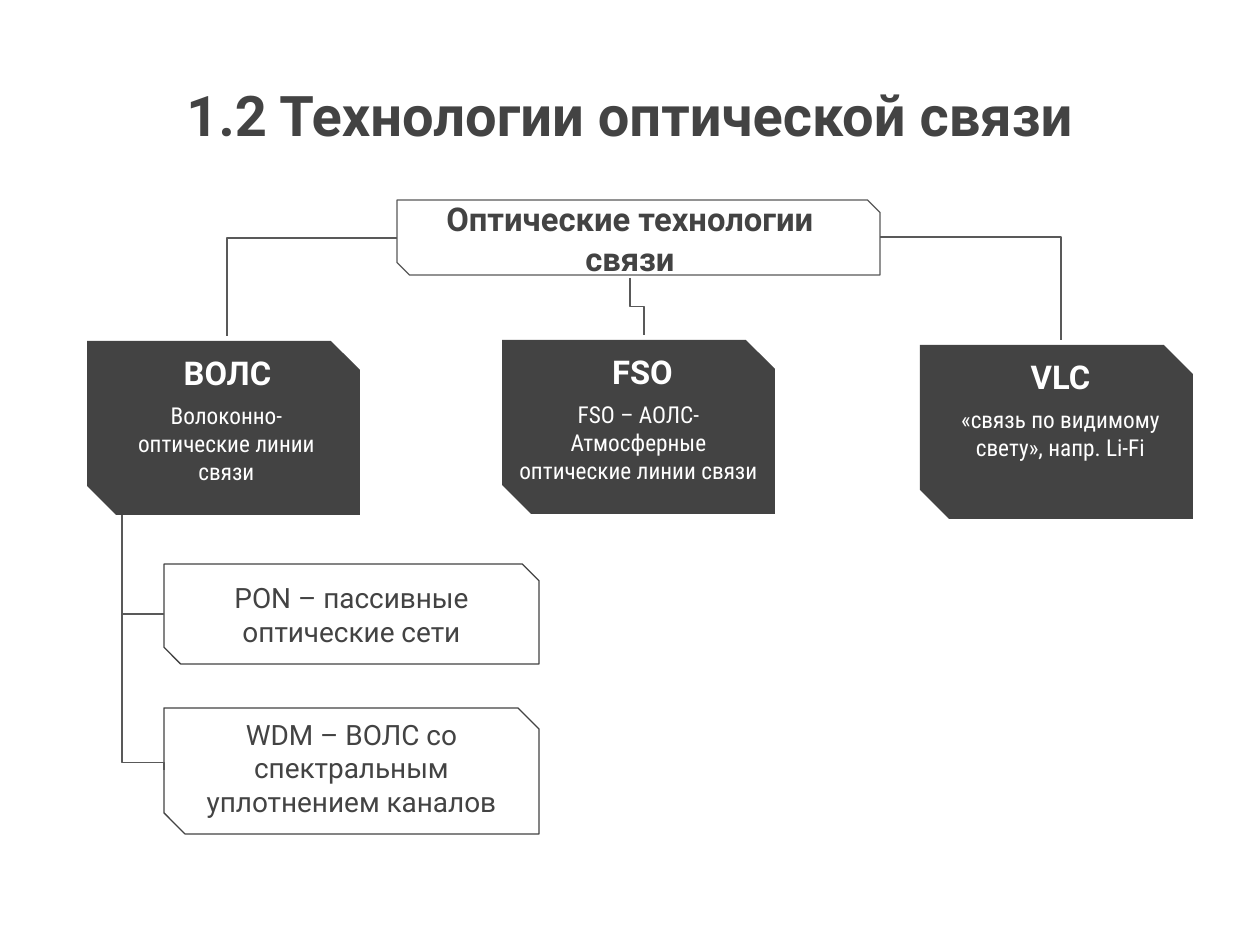
from lxml.etree import SubElement
from pptx import Presentation
from pptx.dml.color import RGBColor
from pptx.enum.shapes import MSO_CONNECTOR, MSO_SHAPE
from pptx.enum.text import MSO_ANCHOR, PP_ALIGN
from pptx.oxml.ns import qn
from pptx.util import Pt

PX = 914400 / 126
COLORS = {"dark": "434343", "line": "595959", "white": "FFFFFF"}
HEADING_FONT, BODY_FONT = "Roboto", "Roboto Condensed"
INSET = 16
CARD_W, CARD_H = 273, 174


def emu(*lengths):
    return [round(length * PX) for length in lengths]


def color(name):
    return RGBColor.from_string(COLORS[name])


def write(holder, text, size, color_name, font=HEADING_FONT, bold=False, anchor=MSO_ANCHOR.TOP):
    frame = holder.text_frame
    frame.word_wrap = True
    frame.vertical_anchor = anchor
    frame.margin_left, frame.margin_top, frame.margin_right, frame.margin_bottom = emu(*[INSET] * 4)
    frame.text = text
    paragraph = frame.paragraphs[0]
    paragraph.alignment = PP_ALIGN.CENTER
    paragraph.font.name = font
    paragraph.font.size = Pt(size)
    paragraph.font.bold = bold
    paragraph.font.color.rgb = color(color_name)


def add_label(slide, box, *args, **kwargs):
    write(slide.shapes.add_textbox(*emu(*box)), *args, **kwargs)


def add_snipped_box(slide, box, fill=None, line=None):
    panel = slide.shapes.add_shape(MSO_SHAPE.SNIP_2_DIAG_RECTANGLE, *emu(*box))
    panel.shadow.inherit = False
    panel.adjustments[0], panel.adjustments[1] = 0, 0.167
    if fill:
        panel.fill.solid()
        panel.fill.fore_color.rgb = color(fill)
    else:
        panel.fill.background()
    if line:
        panel.line.color.rgb = color(line)
        panel.line.width = Pt(0.75)
    else:
        panel.line.fill.background()


def add_elbow(slide, start, end, vertical_first=False, bend=None):
    """Join two points with one corner, or with two when bend gives the share of the first leg."""
    (x1, y1), (x2, y2) = start, end
    if vertical_first:
        # The elbow is laid out sideways about its centre, then turned.
        cx, cy = (x1 + x2) / 2, (y1 + y2) / 2
        half_w, half_h = (y2 - y1) / 2, (x2 - x1) / 2
        x1, y1, x2, y2 = cx + half_w, cy - half_h, cx - half_w, cy + half_h
    elbow = slide.shapes.add_connector(MSO_CONNECTOR.ELBOW, *emu(x1, y1, x2, y2))
    elbow.line.color.rgb = color("line")
    elbow.line.width = Pt(0.75)
    properties = elbow._element.spPr
    if vertical_first:
        properties.find(qn("a:xfrm")).set("rot", str(270 * 60000))
    geometry = properties.find(qn("a:prstGeom"))
    if bend is None:
        geometry.set("prst", "bentConnector2")
    else:
        guides = geometry.find(qn("a:avLst"))
        SubElement(guides, qn("a:gd"), name="adj1", fmla=f"val {round(bend * 100000)}")
    SubElement(properties, qn("a:effectLst"))


def add_title(slide, box, text):
    title = slide.shapes.title
    title.left, title.top, title.width, title.height = emu(*box)
    write(title, text, 32, "dark", bold=True)


def add_root(slide, box, text):
    left, top, width, height = box
    add_snipped_box(slide, box, line="line")
    add_label(slide, (left, top, width - 17, height + 2), text, 18.7, "dark",
              bold=True, anchor=MSO_ANCHOR.MIDDLE)


def add_technology(slide, left, top, name, description, body_left, body_width):
    add_snipped_box(slide, (left, top, CARD_W, CARD_H), fill="dark")
    add_label(slide, (left + 9, top - 5, CARD_W - 10, 72), name, 18.7, "white",
              bold=True, anchor=MSO_ANCHOR.BOTTOM)
    add_label(slide, (left + body_left, top + 44, body_width, 115), description, 13.3,
              "white", font=BODY_FONT)


def add_subtype(slide, box, text, side=0, rise=0):
    """Outlined box whose label is narrowed by side and starts higher by rise."""
    left, top, width, height = box
    add_snipped_box(slide, box, line="dark")
    add_label(slide, (left + side, top - rise, width - 2 * side, height + rise), text, 16,
              "dark", anchor=MSO_ANCHOR.BOTTOM)


def main():
    presentation = Presentation()
    presentation.slide_width, presentation.slide_height = emu(1260, 945)
    slide = presentation.slides.add_slide(presentation.slide_layouts[5])

    add_title(slide, (151, 64, 958, 174), "1.2 Технологии оптической связи")
    add_root(slide, (397, 200, 483, 75), "Оптические технологии связи")

    technologies = [
        (87, 341, "ВОЛС", "Волоконно-оптические линии связи", 21, 237),
        (502, 340, "FSO", "FSO – АОЛС- Атмосферные оптические линии связи", 0, CARD_W),
        (920, 345, "VLC", "«связь по видимому свету», напр. Li-Fi", 22, 237),
    ]
    for technology in technologies:
        add_technology(slide, *technology)

    add_subtype(slide, (164, 564, 375, 100), "PON – пассивные оптические сети", side=7)
    add_subtype(slide, (164, 708, 375, 126), "WDM – ВОЛС со спектральным уплотнением каналов",
                rise=6)

    add_elbow(slide, (397, 238), (227, 336))
    add_elbow(slide, (880, 237), (1061, 340))
    add_elbow(slide, (630, 278), (644, 335), vertical_first=True, bend=0.5)
    add_elbow(slide, (122, 515), (164, 614), vertical_first=True)
    add_elbow(slide, (122, 614), (164, 770), vertical_first=True, bend=0.95)

    presentation.save("out.pptx")


if __name__ == "__main__":
    main()
